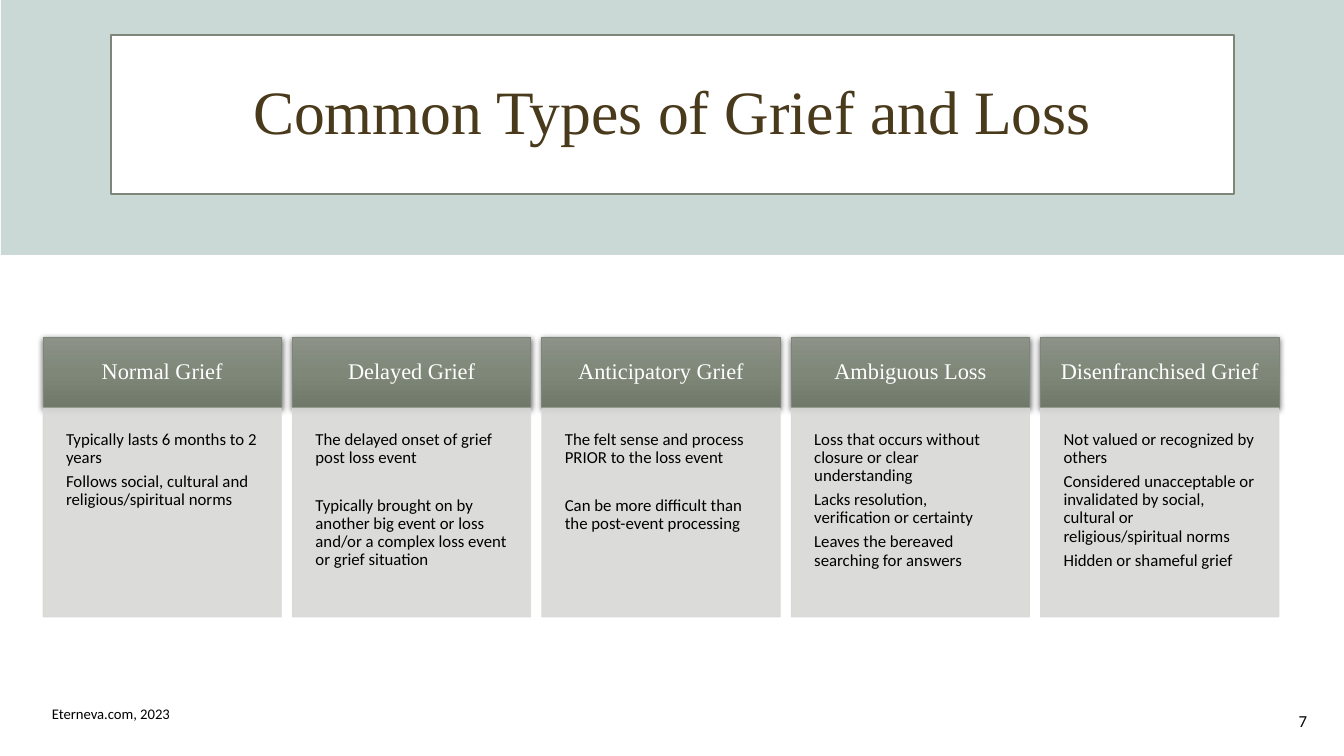
from lxml.etree import SubElement
from pptx import Presentation
from pptx.dml.color import RGBColor
from pptx.enum.shapes import MSO_SHAPE
from pptx.enum.text import MSO_ANCHOR, PP_ALIGN
from pptx.oxml import parse_xml
from pptx.oxml.ns import nsdecls, qn
from pptx.util import Emu, Pt

PX = 914400 / 100.8
COLORS = {
    "band": "CAD8D6", "white": "FFFFFF", "sage": "7E8679", "title": "4A3A1C",
    "header_top": "8D9388", "header_middle": "7E8778", "header_bottom": "70786A",
    "body": "D8D9D7", "text": "000000",
}
SERIF, SANS = "Times New Roman", "Calibri"
WIDE_GAP, NARROW_GAP = 21, 4.2

# Heading, space after each point (pt), points
GRIEF_TYPES = [
    ("Normal Grief", NARROW_GAP, [
        "Typically lasts 6 months to 2 years",
        "Follows social, cultural and religious/spiritual norms"]),
    ("Delayed Grief", WIDE_GAP, [
        "The delayed onset of grief post loss event",
        "Typically brought on by another big event or loss and/or a complex "
        "loss event or grief situation"]),
    ("Anticipatory Grief", WIDE_GAP, [
        "The felt sense and process PRIOR to the loss event",
        "Can be more difficult than the post-event processing"]),
    ("Ambiguous Loss", NARROW_GAP, [
        "Loss that occurs without closure or clear understanding",
        "Lacks resolution, verification or certainty",
        "Leaves the bereaved searching for answers"]),
    ("Disenfranchised Grief", NARROW_GAP, [
        "Not valued or recognized by others",
        "Considered unacceptable or invalidated by social, cultural or "
        "religious/spiritual norms",
        "Hidden or shameful grief"]),
]


def px(length):
    return Emu(round(length * PX))


def rgb(name):
    return RGBColor.from_string(COLORS[name])


def add_panel(slide, box, fill=None, line=None, line_pt=0.5):
    panel = slide.shapes.add_shape(MSO_SHAPE.RECTANGLE, *map(px, box))
    panel.shadow.inherit = False
    if fill:
        panel.fill.solid()
        panel.fill.fore_color.rgb = rgb(fill)
    if line:
        panel.line.color.rgb = rgb(line)
        panel.line.width = Pt(line_pt)
    else:
        panel.line.fill.background()
    return panel


def write(shape, lines, size, font, color, align=PP_ALIGN.LEFT,
          anchor=MSO_ANCHOR.TOP, inset=None, spacing=None, gap=0):
    frame = shape.text_frame
    frame.word_wrap = True
    frame.vertical_anchor = anchor
    if inset is not None:
        frame.margin_left = frame.margin_right = px(inset)
        frame.margin_top = frame.margin_bottom = px(inset)
    frame.text = "\n".join(lines)
    for paragraph in frame.paragraphs:
        paragraph.alignment = align
        paragraph.line_spacing = spacing
        paragraph.space_after = Pt(gap)
        for run in paragraph.runs:
            run.font.size = Pt(size)
            run.font.name = font
            run.font.color.rgb = rgb(color)


def add_title_band(slide, box, title):
    left, top, width, height = box
    add_panel(slide, box, "band")
    frame = add_panel(slide, (left + 110, top + 35, width - 221, height - 96),
                      "white", "sage", 1)
    write(frame, [title], 44, SERIF, "title", PP_ALIGN.CENTER,
          MSO_ANCHOR.MIDDLE, spacing=0.9)


def shade_header(header):
    """Vertical gradient and a soft shadow below."""
    properties = header._element.spPr
    shades = ("header_top", "header_middle", "header_bottom")
    stops = "".join(
        f'<a:gs pos="{i * 50000}"><a:srgbClr val="{COLORS[shade]}"/></a:gs>'
        for i, shade in enumerate(shades))
    properties.insert(2, parse_xml(
        f'<a:gradFill {nsdecls("a")} rotWithShape="1"><a:gsLst>{stops}</a:gsLst>'
        '<a:lin ang="5400000" scaled="0"/></a:gradFill>'))
    properties.find(qn("a:effectLst")).append(parse_xml(
        f'<a:outerShdw {nsdecls("a")} blurRad="57150" dist="19050" dir="5400000" '
        'algn="ctr" rotWithShape="0"><a:srgbClr val="000000">'
        '<a:alpha val="63000"/></a:srgbClr></a:outerShdw>'))


def add_grief_card(slide, box, heading, gap, points):
    left, top, width, height = box
    header_height = 71
    header = add_panel(slide, (left, top, width, header_height), line="sage")
    shade_header(header)
    write(header, [heading], 16, SERIF, "white", PP_ALIGN.CENTER,
          MSO_ANCHOR.MIDDLE, inset=16, spacing=0.9)

    body = add_panel(slide, (left, top + header_height, width,
                             height - header_height), "body", "body")
    for color in body._element.spPr.iter(qn("a:srgbClr")):
        SubElement(color, qn("a:alpha")).set("val", "90000")
    write(body, points, 12, SANS, "text", inset=23, spacing=0.9, gap=gap)


def add_grief_cards(slide, box, grief_types):
    left, top, width, height = box
    gutter = 11
    pitch = (width + gutter) / len(grief_types)
    for i, (heading, gap, points) in enumerate(grief_types):
        add_grief_card(slide, (left + i * pitch, top, pitch - gutter, height),
                       heading, gap, points)


def add_footer(slide, box, source, page):
    left, top, width, height = box
    citation = slide.shapes.add_textbox(*map(px, (left, top, 223, 28)))
    write(citation, [source], 10.5, SANS, "text")
    page_number = slide.shapes.add_textbox(
        *map(px, (left + width - 302, top + 1, 302, height - 1)))
    write(page_number, [page], 12, SANS, "text", PP_ALIGN.RIGHT, MSO_ANCHOR.MIDDLE)


def main():
    deck = Presentation()
    deck.slide_width, deck.slide_height = px(1344), px(756)
    slide = deck.slides.add_slide(deck.slide_layouts[6])
    add_title_band(slide, (1, 0, 1344, 255), "Common Types of Grief and Loss")
    add_grief_cards(slide, (43, 337, 1236, 280), GRIEF_TYPES)
    add_footer(slide, (42, 700, 1275, 41), "Eterneva.com, 2023", "7")
    deck.save("out.pptx")


if __name__ == "__main__":
    main()
